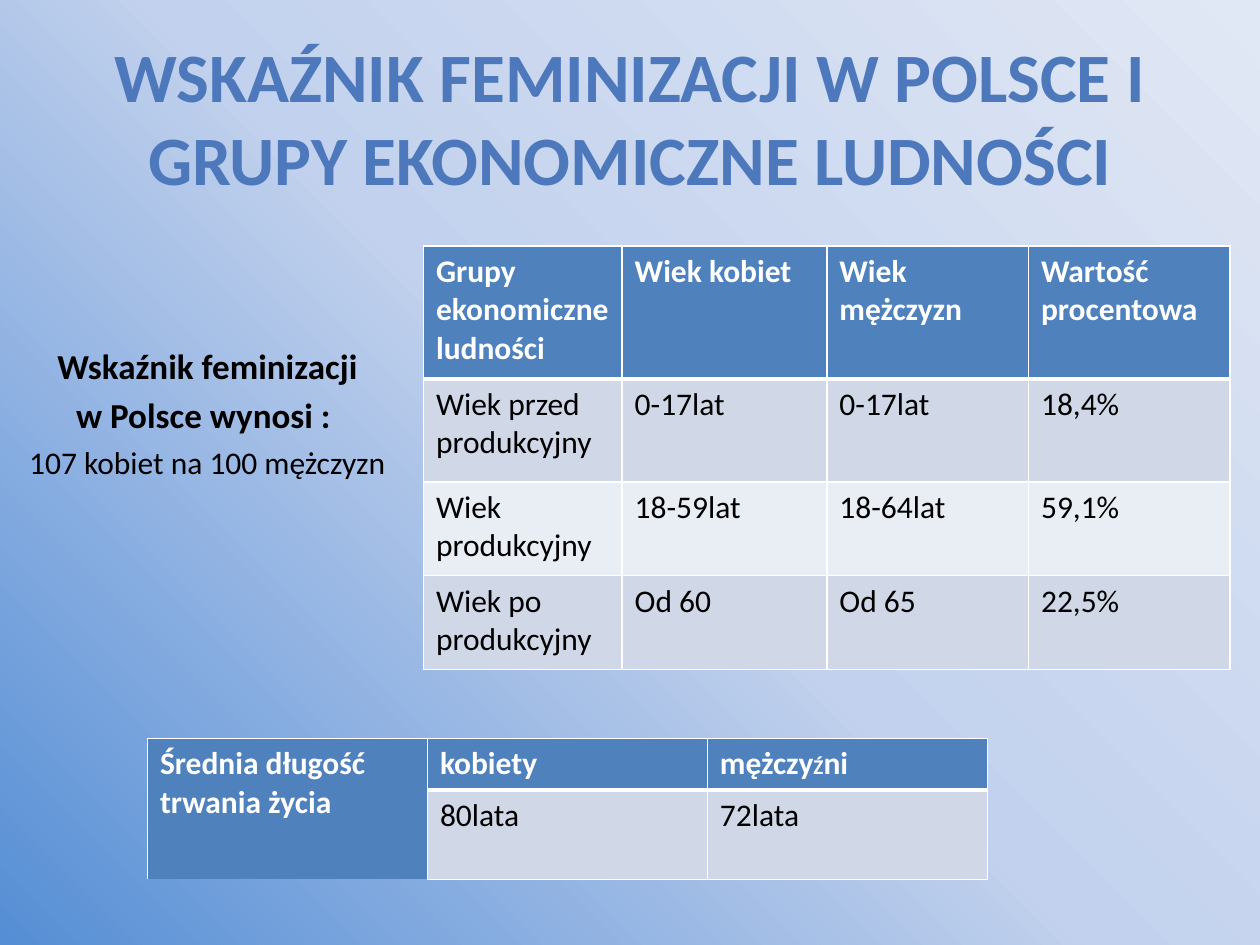
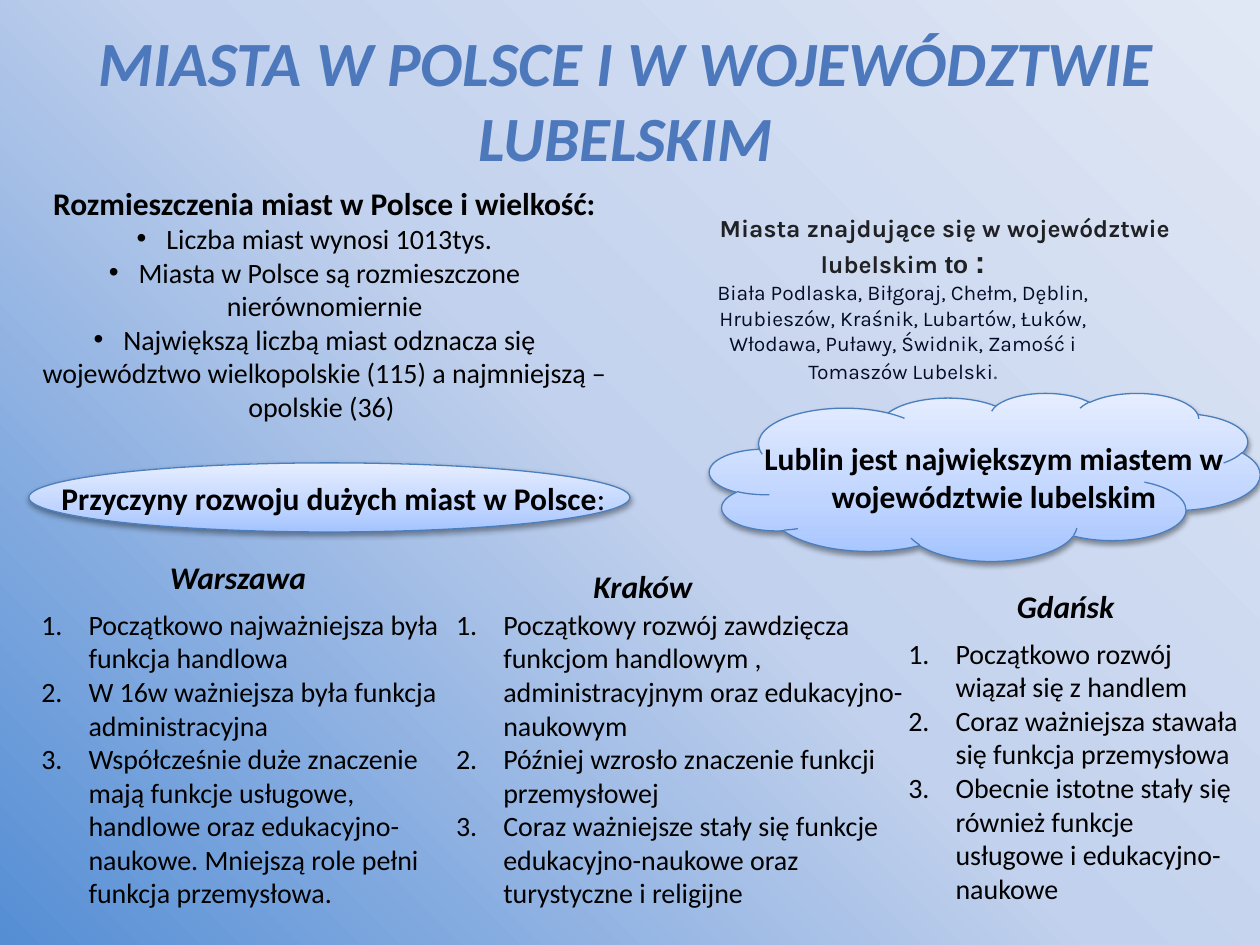
from lxml import etree
from pptx import Presentation
from pptx.dml.color import RGBColor
from pptx.enum import shapes, text
from pptx.oxml import ns, parse_xml
from pptx.util import Pt

BLACK = RGBColor(0x00, 0x00, 0x00)
WHITE = RGBColor(0xFF, 0xFF, 0xFF)
TITLE = RGBColor(0x4D, 0x79, 0xBC)
HEAD = RGBColor(0x4F, 0x81, 0xBD)
BANDS = (RGBColor(0xD0, 0xD8, 0xE8), RGBColor(0xE9, 0xED, 0xF4))
EDGE = RGBColor(0x4B, 0x7E, 0xBC)
DARK = RGBColor(0x20, 0x21, 0x24)
NAVY = RGBColor(0x04, 0x0C, 0x28)
GREY = RGBColor(0x4D, 0x51, 0x56)
SKY = ((0, "558ED5"), (50, "C2D1ED"), (100, "E1E8F5"))
GLASS = ((0, "A4C4FF"), (35, "BFD4FF"), (100, "E6EEFF"))
FONT = "Calibri"
MID = text.PP_ALIGN.CENTER

# A paragraph is a string, or a list of (text, format) runs.
RATIO = [
    [("Wskaźnik feminizacji", dict(size=20, bold=True))],
    [("w Polsce wynosi : ", dict(size=20, bold=True))],
    "107 kobiet na 100 mężczyzn",
]
GROUPS = [
    ["Grupy ekonomiczne ludności", "Wiek kobiet", "Wiek mężczyzn",
     "Wartość procentowa"],
    ["Wiek przed produkcyjny", "0-17lat", "0-17lat", "18,4%"],
    ["Wiek produkcyjny", "18-59lat", "18-64lat", "59,1%"],
    ["Wiek po produkcyjny", "Od 60", "Od 65", "22,5%"],
]
LIFE = [
    ["Średnia długość trwania życia", "kobiety",
     [("mężczy", {}), ("Ź", dict(size=12)), ("ni", {})]],
    ["", "80lata", "72lata"],
]
SPREAD_HEAD = "Rozmieszczenia miast w Polsce i wielkość:"
SPREAD = [
    "Liczba miast wynosi 1013tys.",
    "Miasta w Polsce są rozmieszczone nierównomiernie",
    "Największą liczbą miast odznacza się województwo wielkopolskie (115) "
    "a najmniejszą – opolskie (36) ",
]
CAUSES = [[("Przyczyny rozwoju dużych miast w Polsce", dict(bold=True)),
           (":", {})]]
LUBLIN = "Lublin jest największym miastem w województwie lubelskim"
REGION_HEAD = "Miasta znajdujące się w województwie"
REGION_TAIL = [("lubelskim", {}), (" to ", dict(font="Arial")),
               (":", dict(font="Arial", size=18))]
REGION = [("Biała Podlaska, Biłgoraj, Chełm, Dęblin, Hrubieszów, Kraśnik, "
           "Lubartów, Łuków, Włodawa, Puławy, Świdnik, Zamość i Tomaszów "
           "Lubelski", {}), (".", dict(size=14, color=GREY))]
# name, name position, list box, causes
CITIES = [
    ("Warszawa", (90, 315.5), (16.5, 343.5, 258.5), [
        "Początkowo najważniejsza była funkcja handlowa",
        "W 16w ważniejsza była funkcja administracyjna",
        "Współcześnie duże znaczenie mają funkcje usługowe, handlowe oraz "
        "edukacyjno-naukowe. Mniejszą role pełni funkcja przemysłowa."]),
    ("Kraków", (332, 320.5), (253.5, 343.5, 270), [
        "Początkowy rozwój zawdzięcza funkcjom handlowym , "
        "administracyjnym oraz edukacyjno-naukowym",
        "Później wzrosło znaczenie funkcji przemysłowej",
        "Coraz ważniejsze stały się funkcje edukacyjno-naukowe oraz "
        "turystyczne i religijne"]),
    ("Gdańsk", (574, 332), (512, 360, 208), [
        "Początkowo rozwój wiązał się z handlem",
        "Coraz ważniejsza stawała się funkcja przemysłowa",
        "Obecnie istotne stały się również funkcje usługowe i "
        "edukacyjno-naukowe"]),
]


def tag(name, **attrs):
    return parse_xml(f"<a:{name} {ns.nsdecls('a')} "
                     + " ".join(f'{k}="{v}"' for k, v in attrs.items()) + "/>")


def shade(fill, root, stops, angle):
    """Turn a fill inside root into a linear gradient."""
    fill.gradient()
    grad = next(root.iter(ns.qn("a:gradFill")))
    for child in list(grad):
        grad.remove(child)
    steps = tag("gsLst")
    for spot, color in stops:
        stop = tag("gs", pos=spot * 1000)
        stop.append(tag("srgbClr", val=color))
        steps.append(stop)
    grad.append(steps)
    grad.append(tag("lin", ang=angle * 60000, scaled=0))


def write(frame, paras, size=18, bold=False, italic=False, color=BLACK,
          font=FONT, align=None, mark=None, hang=0, right=0, gap=0,
          more=False):
    """Fill a text frame; more=True adds to the text already there."""
    for i, para in enumerate(paras):
        p = frame.add_paragraph() if i or more else frame.paragraphs[0]
        p.alignment = align
        p.space_before = Pt(gap if i else 0)
        props = p._p.get_or_add_pPr()
        if right:
            props.set("marR", str(Pt(right)))
        if hang:
            props.set("marL", str(Pt(hang)))
            props.set("indent", str(-Pt(hang)))
        if mark == "1.":
            props.append(tag("buFont", typeface="+mj-lt"))
            props.append(tag("buAutoNum", type="arabicPeriod"))
        elif mark:
            props.append(tag("buFont", typeface="Arial"))
            props.append(tag("buChar", char=mark))
        for words, own in [(para, {})] if isinstance(para, str) else para:
            run = p.add_run()
            run.text = words
            face = run.font
            face.name = own.get("font", font)
            face.size = Pt(own.get("size", size))
            face.bold = own.get("bold", bold)
            face.italic = italic
            face.color.rgb = own.get("color", color)


def label(slide, box, paras, wrap=True, middle=False, **style):
    frame = slide.shapes.add_textbox(*map(Pt, box)).text_frame
    frame.word_wrap = wrap
    if middle:
        frame.vertical_anchor = text.MSO_ANCHOR.MIDDLE
    write(frame, paras, **style)
    return frame


def edges(cell, **widths):
    """Draw white cell borders; a zero width leaves the side open."""
    props = cell._tc.get_or_add_tcPr()
    for i, side in enumerate("LRTB"):
        wide = widths.get(side, 1)
        line = tag("ln" + side, w=Pt(wide))
        if wide:
            solid = etree.SubElement(line, ns.qn("a:solidFill"))
            solid.append(tag("srgbClr", val=str(WHITE)))
        else:
            line.append(tag("noFill"))
        props.insert(i, line)


def grid(slide, left, top, cols, rows, data):
    frame = slide.shapes.add_table(len(rows), len(cols), Pt(left), Pt(top),
                                   Pt(sum(cols)), Pt(sum(rows)))
    table = frame.table
    table.first_row = table.horz_banding = False
    for col, wide in zip(table.columns, cols):
        col.width = Pt(wide)
    for r, (row, high) in enumerate(zip(data, rows)):
        table.rows[r].height = Pt(high)
        for c, words in enumerate(row):
            cell = table.cell(r, c)
            open_end = r + 1 < len(data) and not data[r + 1][c]
            head = r == 0 or not words
            cell.fill.solid()
            cell.fill.fore_color.rgb = HEAD if head else BANDS[(r - 1) % 2]
            if not words:
                edges(cell, T=0, B=0)
                continue
            edges(cell, T=3 if r == 1 else 1,
                  B=0 if open_end else 1 if r else 3)
            write(cell.text_frame, [words], bold=head,
                  color=WHITE if head else BLACK)
    return table


def bubble(slide, kind, box):
    shape = slide.shapes.add_shape(kind, *map(Pt, box))
    shade(shape.fill, shape._element.spPr, GLASS, 270)
    shape.line.color.rgb = EDGE
    shape.line.width = Pt(0.75)
    shape.shadow.inherit = False
    cast = tag("outerShdw", blurRad=Pt(3.1), dist=Pt(1.6), dir=90 * 60000,
               rotWithShape=0)
    ink = tag("srgbClr", val="000000")
    ink.append(tag("alpha", val=38000))
    cast.append(ink)
    shape._element.spPr.find(ns.qn("a:effectLst")).append(cast)


def page(deck, title, left, top, **style):
    slide = deck.slides.add_slide(deck.slide_layouts[6])
    shade(slide.background.fill, slide.element, SKY, 315)
    label(slide, (left, top, 648, 90), [title], middle=True, bold=True,
          color=TITLE, align=MID, **style)
    return slide


def people(deck):
    slide = page(deck, "WSKAŹNIK FEMINIZACJI W POLSCE I GRUPY EKONOMICZNE "
                 "LUDNOŚCI", 36, 21.5, size=39.6)
    label(slide, (0, 193.5, 237, 80), RATIO, align=MID, gap=4)
    grid(slide, 242, 140.5, (113.5, 117, 115.25, 115.25),
         (76, 59, 53.5, 53.5), GROUPS)
    life = grid(slide, 84.25, 422, (160,) * 3, (29.5, 51), LIFE)
    life.cell(0, 0).merge(life.cell(1, 0))


def towns(deck):
    slide = page(deck, "MIASTA W POLSCE I W WOJEWÓDZTWIE LUBELSKIM",
                 33.5, 11.5, size=36, italic=True)
    bubble(slide, shapes.MSO_SHAPE.CLOUD, (405.5, 224.5, 314.5, 96))
    bubble(slide, shapes.MSO_SHAPE.OVAL, (16.5, 264.5, 343.5, 39.5))
    label(slide, (28, 270, 338, 29), CAUSES)
    for name, (x, y), (left, top, wide), causes in CITIES:
        label(slide, (x, y, 93 if name == "Warszawa" else 71, 29), [name],
              wrap=False, bold=True, italic=True)
        label(slide, (left, top, wide, 180), causes, size=16, mark="1.",
              hang=27)
    frame = label(slide, (16.5, 101.5, 338, 145), [SPREAD_HEAD], bold=True,
                  align=MID)
    write(frame, SPREAD, size=16, align=MID, mark="•", more=True)
    label(slide, (417, 247.5, 302, 51), [LUBLIN], bold=True, align=MID)
    karla = dict(font="Karla", align=MID)
    frame = label(slide, (382.5, 118, 315, 94), [REGION_HEAD], size=14,
                  bold=True, color=DARK, **karla)
    write(frame, [REGION_TAIL], size=14, bold=True, color=DARK, right=48,
          more=True, **karla)
    write(frame, [REGION], size=12, color=NAVY, more=True, **karla)


def main():
    deck = Presentation()
    deck.slide_width, deck.slide_height = Pt(720), Pt(540)
    people(deck)
    towns(deck)
    deck.save("out.pptx")


if __name__ == "__main__":
    main()
